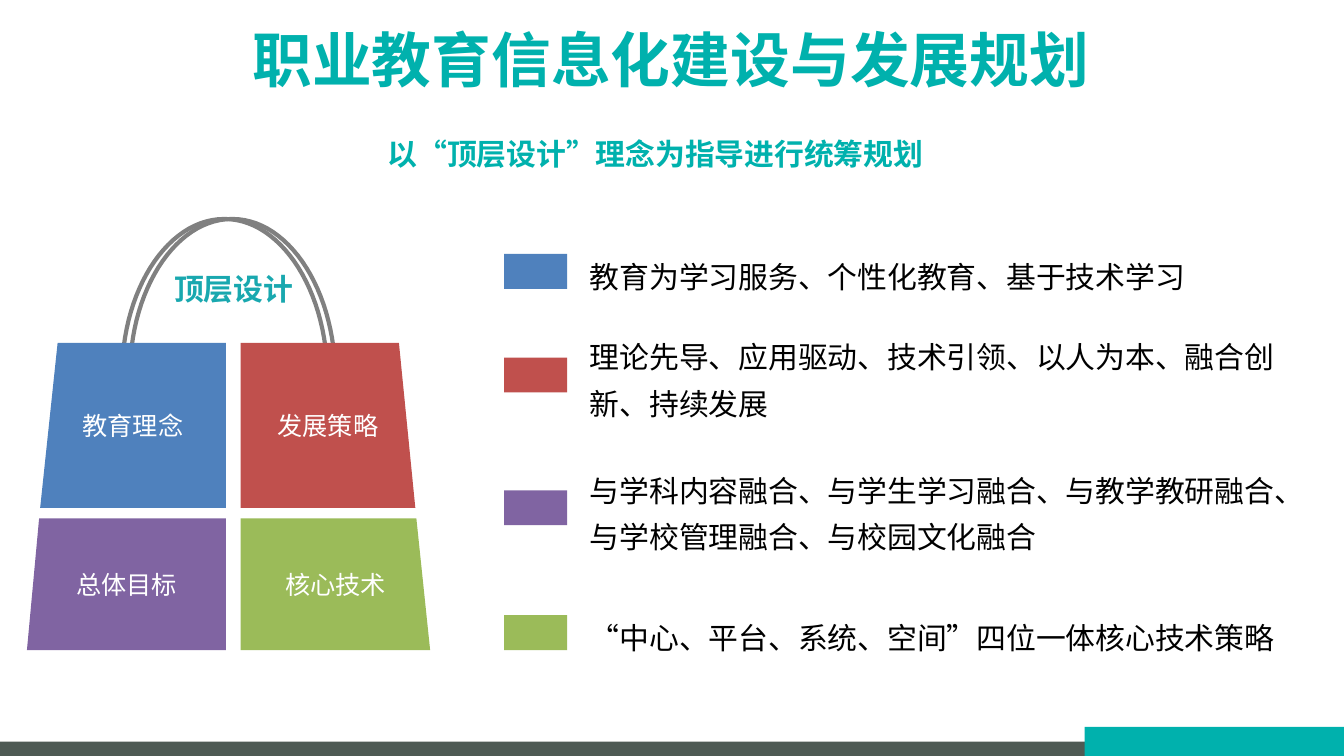
from lxml import etree
from pptx import Presentation
from pptx import util as u
from pptx.dml.color import RGBColor
from pptx.enum import lang, shapes, text
from pptx.oxml import ns

TEAL, LABEL_TEAL, SLATE, GREY = "00B1AD", "19A8AF", "4E5A54", "808080"
BLUE, RED, PURPLE, GREEN = "4F81BD", "C0504D", "8064A2", "9BBB59"
CJK = "Noto Sans CJK SC"
MIDDLE, TOP = text.MSO_ANCHOR.MIDDLE, text.MSO_ANCHOR.TOP
CENTER, LEFT = text.PP_ALIGN.CENTER, text.PP_ALIGN.LEFT


def rgb(hex_colour):
    return RGBColor.from_string(hex_colour)


def bezier(p0, p1, p2, p3, steps=24):
    """Return points along a cubic curve, without its start."""
    points = []
    for i in range(1, steps + 1):
        t = i / steps
        weights = ((1 - t) ** 3, 3 * t * (1 - t) ** 2, 3 * t * t * (1 - t), t ** 3)
        points.append(tuple(
            sum(w * p[axis] for w, p in zip(weights, (p0, p1, p2, p3)))
            for axis in (0, 1)))
    return points


class Board:
    """Holds the slide and its text style; lengths are in centimetres."""

    def __init__(self, slide, body_size=16):
        self.slide = slide
        self.body_size = body_size

    def add_words(self, frame, words, colour, size=None, font=CJK, bold=False,
                  align=CENTER, anchor=MIDDLE, spacing=None):
        frame.word_wrap = True
        frame.vertical_anchor = anchor
        paragraph = frame.paragraphs[0]
        paragraph.alignment = align
        if spacing:
            paragraph.line_spacing = spacing
        run = paragraph.add_run()
        run.text = words
        run.font.size = u.Pt(size or self.body_size)
        run.font.bold = bold
        run.font.color.rgb = rgb(colour)
        run.font.name = font
        run.font.language_id = lang.MSO_LANGUAGE_ID.SIMPLIFIED_CHINESE
        east_asian = etree.SubElement(run.font._element, ns.qn("a:ea"))
        east_asian.set("typeface", CJK)

    def text_box(self, left, top, width, height, words, colour, **style):
        box = self.slide.shapes.add_textbox(*map(u.Cm, (left, top, width, height)))
        self.add_words(box.text_frame, words, colour, **style)

    def bar(self, left, top, width, height, colour):
        block = self.slide.shapes.add_shape(
            shapes.MSO_SHAPE.RECTANGLE, *map(u.Cm, (left, top, width, height)))
        block.shadow.inherit = False
        block.fill.solid()
        block.fill.fore_color.rgb = rgb(colour)
        block.line.fill.background()

    def outline(self, points, close):
        start, *rest = [(u.Cm(x), u.Cm(y)) for x, y in points]
        builder = self.slide.shapes.build_freeform(*start)
        builder.add_line_segments(rest, close=close)
        figure = builder.convert_to_shape()
        figure.shadow.inherit = False
        return figure

    def tile(self, corners, colour, words):
        panel = self.outline(corners, close=True)
        panel.fill.solid()
        panel.fill.fore_color.rgb = rgb(colour)
        panel.line.fill.background()
        self.add_words(panel.text_frame, words, "FFFFFF", size=13.5)

    def handle(self, left):
        foot, shoulder, peak = 6.71, 6.55, 4.14
        base, crown, end = (left, shoulder), (left + 1.9, peak), (left + 3.81, shoulder)
        points = [(left, foot), base]
        points += bezier(base, (left + 0.17, 5.18), (left + 0.96, peak), crown)
        points += bezier(crown, (left + 2.84, peak), (left + 3.63, 5.18), end)
        strap = self.outline(points, close=False)
        strap.fill.background()
        strap.line.color.rgb = rgb(GREY)
        strap.line.width = u.Pt(2.25)


def main():
    deck = Presentation()
    deck.slide_width, deck.slide_height = u.Cm(25.4), u.Cm(14.29)
    board = Board(deck.slides.add_slide(deck.slide_layouts[6]))

    board.bar(0, 14.02, 25.4, 0.27, SLATE)
    board.bar(20.5, 13.74, 4.9, 0.55, TEAL)
    board.text_box(1.09, 0.3, 23.19, 1.55, "职业教育信息化建设与发展规划", TEAL,
                   size=32, bold=True, anchor=TOP)
    board.text_box(5.31, 2.13, 14.17, 1.55, "以“顶层设计”理念为指导进行统筹规划", TEAL,
                   bold=True)

    for strap_left in (2.34, 2.49):
        board.handle(strap_left)

    # Bag panels: inner edge, outer edge at top and bottom, row top and bottom
    upper, lower = (6.48, 9.6), (9.8, 12.29)
    left_inner, right_inner = 4.27, 4.55
    panels = [
        (left_inner, 1.09, 0.76, upper, BLUE, "教育理念"),
        (right_inner, 7.54, 7.85, upper, RED, "发展策略"),
        (left_inner, 0.74, 0.51, lower, PURPLE, "总体目标"),
        (right_inner, 7.87, 8.13, lower, GREEN, "核心技术"),
    ]
    for inner, outer_top, outer_bottom, (top, bottom), colour, words in panels:
        board.tile([(outer_top, top), (inner, top), (inner, bottom),
                    (outer_bottom, bottom)], colour, words)
    board.text_box(2.72, 5, 3.4, 0.94, "顶层设计", LABEL_TEAL, bold=True, anchor=TOP)

    one_line, two_lines = 1.14, 2.03
    notes = [
        (4.8, 4.55, one_line, BLUE, "教育为学习服务、个性化教育、基于技术学习"),
        (6.76, 6.07, two_lines, RED,
         "理论先导、应用驱动、技术引领、以人为本、融合创新、持续发展"),
        (9.27, 8.59, two_lines, PURPLE,
         "与学科内容融合、与学生学习融合、与教学教研融合、与学校管理融合、与校园文化融合"),
        (11.63, 11.38, one_line, GREEN, "“中心、平台、系统、空间”四位一体核心技术策略"),
    ]
    for key_top, note_top, height, colour, words in notes:
        board.bar(9.53, key_top, 1.19, 0.66, colour)
        board.text_box(10.9, note_top, 13.79, height, words, "000000",
                       font="Calibri", align=LEFT, spacing=1.3)

    deck.save("out.pptx")


if __name__ == "__main__":
    main()
